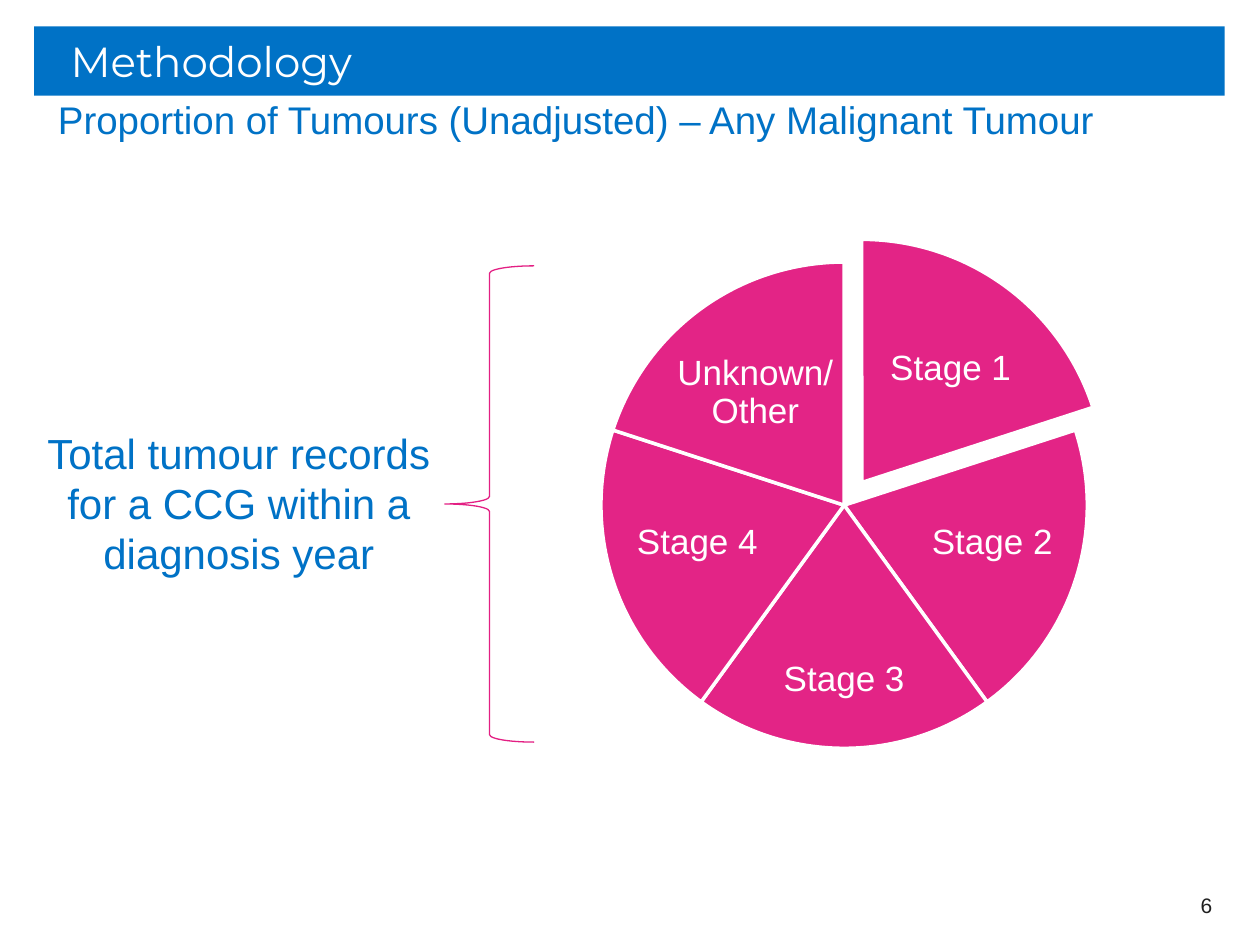
from pptx import Presentation
from pptx.dml.color import RGBColor
from pptx.enum.shapes import MSO_SHAPE as Shape
from pptx.enum.text import MSO_ANCHOR as Anchor, MSO_AUTO_SIZE as Fit, PP_ALIGN as Align
from pptx.oxml.ns import qn
from pptx.util import Inches, Pt
from lxml.etree import SubElement

BLUE = RGBColor(0x00, 0x72, 0xC6)
PINK = RGBColor(0xE3, 0x24, 0x86)
ROSE = RGBColor(0xE3, 0x1F, 0x83)
WHITE = RGBColor(0xFF, 0xFF, 0xFF)
DARK = RGBColor(0x20, 0x20, 0x20)

SIZE = 3.86
SWEEP = 72
LABELS = [
    ("Stage 1", (6.89, 2.48, 1.31, 0.9)),
    ("Stage 2", (7.3, 3.83, 1.15, 0.97)),
    ("Stage 3", (6.01, 4.98, 1.38, 0.83)),
    ("Stage 4", (4.96, 3.83, 1.15, 0.97)),
    ("Unknown/ Other", (5.34, 2.67, 1.31, 0.9)),
]


def write(shape, text, size=20, color=WHITE, font="Arial", align=Align.CENTER,
          anchor=Anchor.MIDDLE, pad=None, lead=None, fit=Fit.NONE):
    frame = shape.text_frame
    frame.word_wrap = True
    frame.auto_size = fit
    frame.vertical_anchor = anchor
    if pad is not None:
        frame.margin_left = frame.margin_right = Inches(pad)
        frame.margin_top = frame.margin_bottom = Inches(pad)
    para = frame.paragraphs[0]
    para.alignment = align
    if lead:
        para.line_spacing = lead
    run = para.add_run()
    run.text = text
    run.font.size = Pt(size)
    run.font.name = font
    run.font.color.rgb = color
    return para


class Page:
    def __init__(self, slide, font="Arial", head="Montserrat"):
        self.slide = slide
        self.font = font
        self.head = head

    def place(self, shape, box):
        shape.left, shape.top, shape.width, shape.height = map(Inches, box)

    def indent(self, para):
        para.space_before = Pt(6)
        props = para._p.get_or_add_pPr()
        props.set("marL", str(Inches(0.19)))
        props.set("indent", "0")
        SubElement(props, qn("a:buNone"))

    def title(self, text, box):
        shape = self.slide.shapes.title
        self.place(shape, box)
        shape.fill.solid()
        shape.fill.fore_color.rgb = BLUE
        self.indent(write(shape, text, size=24, font=self.head, align=Align.LEFT))

    def body(self, text, box):
        shape = self.slide.placeholders[1]
        self.place(shape, box)
        para = write(shape, text, size=22, color=BLUE, font=self.font,
                     align=Align.LEFT, anchor=Anchor.TOP, pad=0)
        para.space_after = Pt(6)
        self.indent(para)

    def text(self, text, box, to=None, **style):
        shapes = (to or self.slide).shapes
        write(shapes.add_textbox(*map(Inches, box)), text, font=self.font, **style)

    def slice(self, group, left, top, start):
        shape = group.shapes.add_shape(Shape.PIE, *map(Inches, (left, top, SIZE, SIZE)))
        shape.shadow.inherit = False
        for i, angle in enumerate((start, start + SWEEP)):
            shape.adjustments[i] = angle % 360 * 0.6
        shape.fill.solid()
        shape.fill.fore_color.rgb = PINK
        shape.line.color.rgb = WHITE
        shape.line.width = Pt(2)

    def pie(self, left, top, labels):
        group = self.slide.shapes.add_group_shape()
        for i, (label, box) in enumerate(labels):
            shift = (0.14, -0.18) if i == 0 else (0, 0)
            self.slice(group, left + shift[0], top + shift[1], 270 + SWEEP * i)
            self.text(label, box, to=group, pad=0.03, lead=0.9)

    def brace(self, box):
        shape = self.slide.shapes.add_shape(Shape.LEFT_BRACE, *map(Inches, box))
        shape.shadow.inherit = False
        shape.fill.background()
        shape.line.color.rgb = ROSE
        shape.line.width = Pt(0.75)


def main():
    deck = Presentation()
    deck.slide_width, deck.slide_height = Inches(10), Inches(7.5)
    page = Page(deck.slides.add_slide(deck.slide_layouts[1]))
    page.title("Methodology", (0.27, 0.21, 9.45, 0.55))
    page.body("Proportion of Tumours (Unadjusted) – Any Malignant Tumour",
              (0.27, 0.76, 9.45, 0.47))
    page.text("6", (7.39, 6.98, 2.33, 0.4), size=12, color=DARK, align=Align.RIGHT)
    page.pie(4.77, 2.08, LABELS)
    page.brace((3.53, 2.11, 0.71, 3.78))
    page.text("Total tumour records for a CCG within a diagnosis year",
              (0.27, 3.34, 3.25, 1.31), size=24, color=BLUE,
              anchor=Anchor.TOP, fit=Fit.SHAPE_TO_FIT_TEXT)
    deck.save("out.pptx")


if __name__ == "__main__":
    main()
